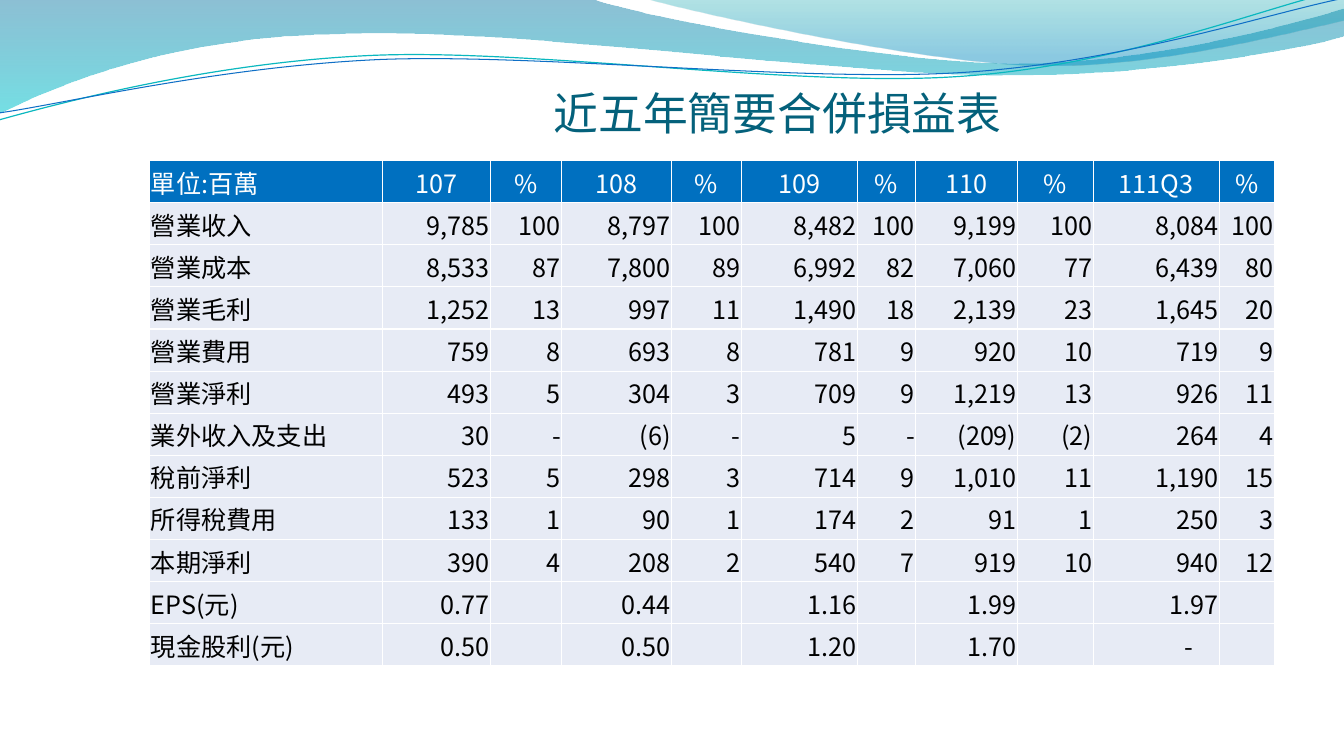
from math import cos, radians, sin

from lxml import etree
from pptx import Presentation
from pptx.dml.color import RGBColor
from pptx.enum.text import MSO_ANCHOR, PP_ALIGN
from pptx.oxml.ns import qn
from pptx.util import Pt

LEFT, CENTER, RIGHT = PP_ALIGN.LEFT, PP_ALIGN.CENTER, PP_ALIGN.RIGHT
MIDDLE, BOTTOM = MSO_ANCHOR.MIDDLE, MSO_ANCHOR.BOTTOM

FONT = "Noto Sans CJK SC"
TITLE = "近五年簡要合併損益表"
HEADER = ["單位:百萬", "107", "%", "108", "%", "109", "%", "110", "%", "111Q3", "%"]
STATEMENT = [
    ["營業收入", "9,785", "100", "8,797", "100", "8,482", "100", "9,199", "100", "8,084", "100"],
    ["營業成本", "8,533", "87", "7,800", "89", "6,992", "82", "7,060", "77", "6,439", "80"],
    ["營業毛利", "1,252", "13", "997", "11", "1,490", "18", "2,139", "23", "1,645", "20"],
    ["營業費用", "759", "8", "693", "8", "781", "9", "920", "10", "719", "9"],
    ["營業淨利", "493", "5", "304", "3", "709", "9", "1,219", "13", "926", "11"],
    ["業外收入及支出", "30", "-", "(6)", "-", "5", "-", "(209)", "(2)", "264", "4"],
    ["稅前淨利", "523", "5", "298", "3", "714", "9", "1,010", "11", "1,190", "15"],
    ["所得稅費用", "133", "1", "90", "1", "174", "2", "91", "1", "250", "3"],
    ["本期淨利", "390", "4", "208", "2", "540", "7", "919", "10", "940", "12"],
    ["EPS(元)", "0.77", "", "0.44", "", "1.16", "", "1.99", "", "1.97", ""],
    ["現金股利(元)", "0.50", "", "0.50", "", "1.20", "", "1.70", "", "-　", ""],
]
COLUMN_WIDTHS = [166.3, 77, 51.1, 78.5, 49.7, 82.8, 41.8, 72.7, 54, 90, 39.6]
ROW_HEIGHT = 30.08
TABLE_LEFT, TABLE_TOP = 107, 114.7

# Each wave is a start point, then line ends (x, y) or curves (x1, y1, x2, y2, x, y).
# Bands add gradient stops (position, colour, opacity in percent).
BANDS = [
    ([(0, 0), (422.6, -0.7),
      (456.5, 12.2, 637.2, 45.4, 727.9, 45.4),
      (819.4, 45.4, 920.2, 18.7, 959.8, 6.5),
      (961.2, 25.9),
      (943.9, 31.7, 835.2, 54.7, 715.7, 54),
      (596.9, 54, 366.5, 20.2, 247, 24.5),
      (123.8, 25.9, 43.9, 59.8, -0.7, 81.4)],
     [(0, "0074A1", 45), (1, "00C6CF", 55)]),
    ([(460.1, -0.7),
      (488.9, 7.9, 654.5, 44.6, 738, 46.8),
      (821.5, 49.7, 923, 23, 959.8, 15.1),
      (959.8, 0)],
     [(0, "00A1A9", 30), (0.8, "008BBF", 45)]),
]
STRANDS = [
    ([(-0.7, 85.7),
      (46.1, 72.7, 151.9, 44.6, 265.7, 39.6),
      (379.4, 34.6, 568.8, 62.6, 684, 54.7),
      (799.2, 47.5, 901.4, 5.8, 958.3, -7.2)], "0AB8BF", 0.85),
    ([(0, 80.6),
      (45.4, 74.2, 157, 47.5, 272.2, 42.5),
      (386.6, 38.2, 573.1, 59, 687.6, 51.8),
      (802.8, 44.6, 903.6, 10.1, 960.5, -1.4)], "0F6FC6", 0.75),
]
STRAND_TILT = -2.7


def color(hex_string):
    return RGBColor.from_string(hex_string)


def turn(x, y, degrees):
    angle = radians(degrees)
    return x * cos(angle) - y * sin(angle), x * sin(angle) + y * cos(angle)


def level(points, tilt):
    """Move points so that tilting their frame about its centre restores them."""
    flat = [turn(x, y, -tilt) for x, y in points]
    center_x, center_y = [(min(axis) + max(axis)) / 2 for axis in zip(*flat)]
    tilted_x, tilted_y = turn(center_x, center_y, tilt)
    return [(x + tilted_x - center_x, y + tilted_y - center_y) for x, y in flat]


def add_wave(slide, outline, close, tilt=0):
    points = [segment[i:i + 2] for segment in outline for i in range(0, len(segment), 2)]
    points = [(Pt(x), Pt(y)) for x, y in level(points, tilt)]
    builder = slide.shapes.build_freeform(*points[0])
    builder.add_line_segments(points[1:], close=close)
    wave = builder.convert_to_shape()
    wave.rotation = tilt
    wave.shadow.inherit = False

    # Every three points of a curved segment become one cubic curve.
    lines = iter(list(wave._element.iter(qn("a:lnTo"))))
    for segment in outline[1:]:
        steps = [next(lines) for _ in range(len(segment) // 2)]
        if len(steps) == 3:
            curve = etree.Element(qn("a:cubicBezTo"))
            steps[0].addprevious(curve)
            for step in steps:
                curve.append(step[0])
                step.getparent().remove(step)
    return wave


def add_band(slide, outline, stops):
    band = add_wave(slide, outline, True)
    band.line.fill.background()
    band.fill.gradient()
    band.fill.gradient_angle = 270
    for stop, (position, hex_string, _) in zip(band.fill.gradient_stops, stops):
        stop.position = position
        stop.color.rgb = color(hex_string)
    for tint, (_, _, opacity) in zip(band._element.iter(qn("a:srgbClr")), stops):
        etree.SubElement(tint, qn("a:alpha"), val=str(opacity * 1000))


def add_strand(slide, outline, hex_string, width):
    strand = add_wave(slide, outline, False, STRAND_TILT)
    strand.fill.background()
    strand.line.color.rgb = color(hex_string)
    strand.line.width = Pt(width)


def style_text(paragraph, size, hex_string, align):
    paragraph.alignment = align
    for run in paragraph.runs:
        run.font.size = Pt(size)
        run.font.bold = False
        run.font.name = FONT
        run.font.color.rgb = color(hex_string)
        etree.SubElement(run.font._element, qn("a:ea"), typeface=FONT)


def add_borders(cell):
    properties = cell._tc.get_or_add_tcPr()
    for side in ("lnL", "lnR", "lnT", "lnB"):
        border = etree.SubElement(properties, qn(f"a:{side}"), w=str(Pt(1)))
        fill = etree.SubElement(border, qn("a:solidFill"))
        etree.SubElement(fill, qn("a:srgbClr"), val="FFFFFF")


def place_title(slide):
    title = slide.shapes.title
    title.left, title.top, title.width, title.height = Pt(204.5), Pt(49), Pt(702), Pt(50.4)
    frame = title.text_frame
    frame.text = TITLE
    frame.word_wrap = True
    frame.vertical_anchor = BOTTOM
    frame.margin_left = frame.margin_right = frame.margin_bottom = 0
    frame.margin_top = Pt(3.6)
    style_text(frame.paragraphs[0], 32, "04617B", CENTER)
    slide.shapes._spTree.append(title._element)


def add_statement(slide):
    rows = [HEADER] + STATEMENT
    table = slide.shapes.add_table(
        len(rows), len(HEADER), Pt(TABLE_LEFT), Pt(TABLE_TOP),
        Pt(sum(COLUMN_WIDTHS)), Pt(ROW_HEIGHT * len(rows))).table
    for column, width in zip(table.columns, COLUMN_WIDTHS):
        column.width = Pt(width)
    for r, values in enumerate(rows):
        table.rows[r].height = Pt(ROW_HEIGHT)
        fill, ink, align = ("E7EBF5", "000000", RIGHT) if r else ("0070C0", "FFFFFF", CENTER)
        for c, value in enumerate(values):
            cell = table.cell(r, c)
            cell.margin_left = cell.margin_right = cell.margin_top = Pt(0.72)
            cell.margin_bottom = 0
            cell.vertical_anchor = MIDDLE
            add_borders(cell)
            cell.fill.solid()
            cell.fill.fore_color.rgb = color(fill)
            if value:
                cell.text_frame.text = value
                style_text(cell.text_frame.paragraphs[0], 18, ink, align if c else LEFT)


def main():
    deck = Presentation()
    deck.slide_width, deck.slide_height = Pt(960), Pt(540)
    slide = deck.slides.add_slide(deck.slide_layouts[5])
    for outline, stops in BANDS:
        add_band(slide, outline, stops)
    for outline, hex_string, width in STRANDS:
        add_strand(slide, outline, hex_string, width)
    place_title(slide)
    add_statement(slide)
    deck.save("out.pptx")


if __name__ == "__main__":
    main()
